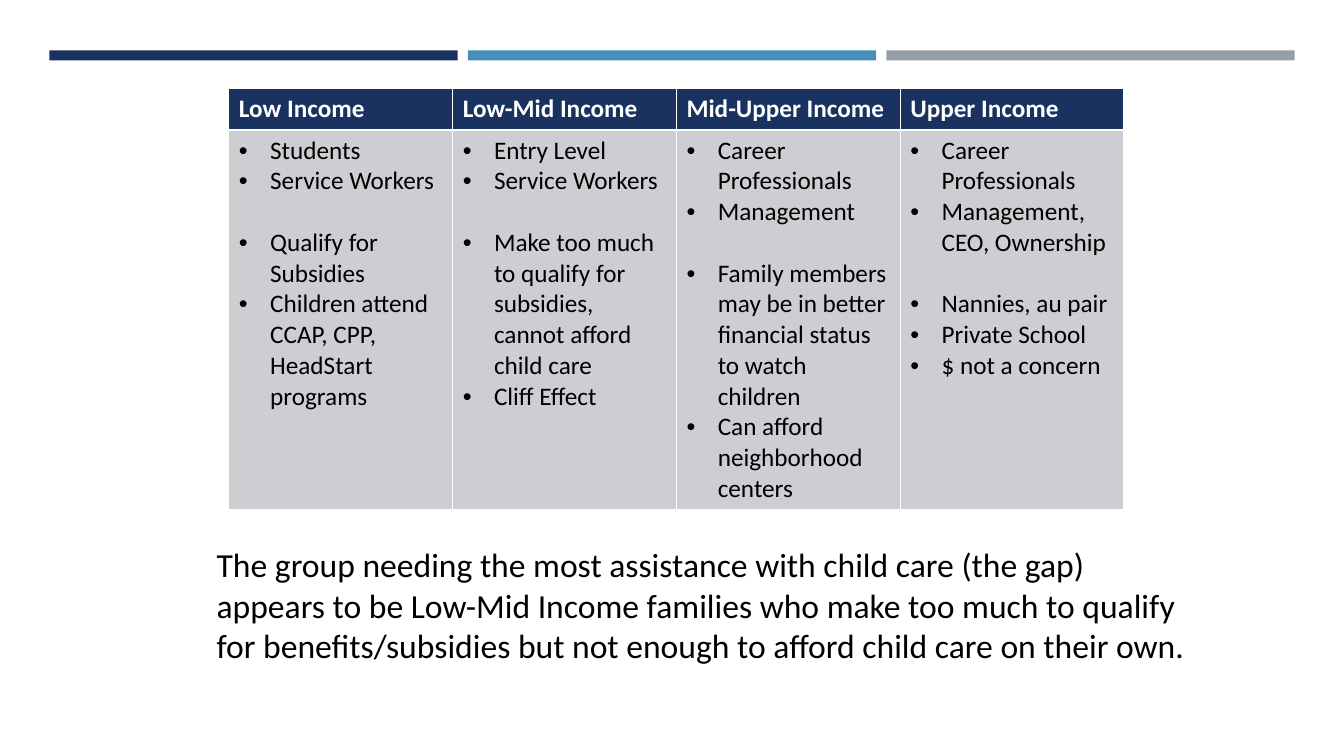
import pptx
import pptx.util
import pptx.dml.color
import pptx.enum.shapes
import lxml.etree
from pptx.util import Inches, Pt
from pptx.dml.color import RGBColor

NAVY = RGBColor(0x1A, 0x32, 0x60)
BLUE = RGBColor(0x45, 0x90, 0xB8)
GRAY = RGBColor(0x96, 0x9F, 0xA7)
PALE = RGBColor(0xCD, 0xCE, 0xD2)
WHITE = RGBColor(0xFF, 0xFF, 0xFF)
BLACK = RGBColor(0, 0, 0)
FONT = "Calibri"

BARS = [NAVY, BLUE, GRAY]
GROUPS = [
    ("Low Income",
     ["Students", "Service Workers"],
     ["Qualify for Subsidies", "Children attend CCAP, CPP, HeadStart programs"]),
    ("Low-Mid Income",
     ["Entry Level", "Service Workers"],
     ["Make too much to qualify for subsidies, cannot afford child care",
      "Cliff Effect"]),
    ("Mid-Upper Income",
     ["Career Professionals", "Management"],
     ["Family members may be in better financial status to watch children",
      "Can afford neighborhood centers"]),
    ("Upper Income",
     ["Career Professionals", "Management, CEO, Ownership"],
     ["Nannies, au pair", "Private School", "$ not a concern"]),
]
SUMMARY = ("The group needing the most assistance with child care (the gap) "
           "appears to be Low-Mid Income families who make too much to qualify "
           "for benefits/subsidies but not enough to afford child care on their own.")

BAR_LEFT, BAR_WIDTH, BAR_STEP = 0.49, 4.05, 4.15
COL_WIDTH = 2.22
ROW_HEIGHTS = [0.41, 3.76]
INDENT = Inches(0.31)
GAP = Pt(22)


def style(p, size, color, bold=False):
    p.font.name = FONT
    p.font.size = Pt(size)
    p.font.bold = bold
    p.font.color.rgb = color


def add_bullet(p):
    pPr = p._p.get_or_add_pPr()
    pPr.set("marL", str(INDENT))
    pPr.set("indent", str(-INDENT))
    for tag, key, value in [("buFont", "typeface", "Arial"), ("buChar", "char", "•")]:
        bullet = lxml.etree.Element(pptx.oxml.ns.qn("a:" + tag))
        bullet.set(key, value)
        pPr.insert_element_before(bullet, "a:tabLst", "a:defRPr", "a:extLst")


def fill_cell(cell, color):
    cell.fill.solid()
    cell.fill.fore_color.rgb = color


def add_bars(s):
    for i, color in enumerate(BARS):
        bar = s.shapes.add_shape(
            pptx.enum.shapes.MSO_SHAPE.RECTANGLE, Inches(BAR_LEFT + i * BAR_STEP),
            Inches(0.5), Inches(BAR_WIDTH), Inches(0.1))
        bar.shadow.inherit = False
        bar.fill.solid()
        bar.fill.fore_color.rgb = color
        bar.line.fill.background()


def add_income_table(s):
    table = s.shapes.add_table(
        2, len(GROUPS), Inches(2.27), Inches(0.88),
        Inches(COL_WIDTH * len(GROUPS)), Inches(sum(ROW_HEIGHTS))).table
    table.horz_banding = False
    for row, height in zip(table.rows, ROW_HEIGHTS):
        row.height = Inches(height)
    for col, (heading, members, care) in enumerate(GROUPS):
        table.columns[col].width = Inches(COL_WIDTH)
        head, body = table.cell(0, col), table.cell(1, col)
        fill_cell(head, NAVY)
        fill_cell(body, PALE)
        head.text = heading
        style(head.text_frame.paragraphs[0], 18, WHITE, True)
        body.text = "\n".join(members + care)
        paragraphs = body.text_frame.paragraphs
        for p in paragraphs:
            style(p, 18, BLACK)
            add_bullet(p)
        paragraphs[len(members)].space_before = GAP


def add_summary(s):
    tf = s.shapes.add_textbox(
        Inches(2.05), Inches(5.35), Inches(9.85), Inches(1.31)).text_frame
    tf.word_wrap = True
    tf.text = SUMMARY
    style(tf.paragraphs[0], 24, BLACK)


def main():
    prs = pptx.Presentation()
    prs.slide_width, prs.slide_height = Inches(13.33), Inches(7.5)
    s = prs.slides.add_slide(prs.slide_layouts[6])
    add_bars(s)
    add_income_table(s)
    add_summary(s)
    prs.save("out.pptx")


if __name__ == "__main__":
    main()
